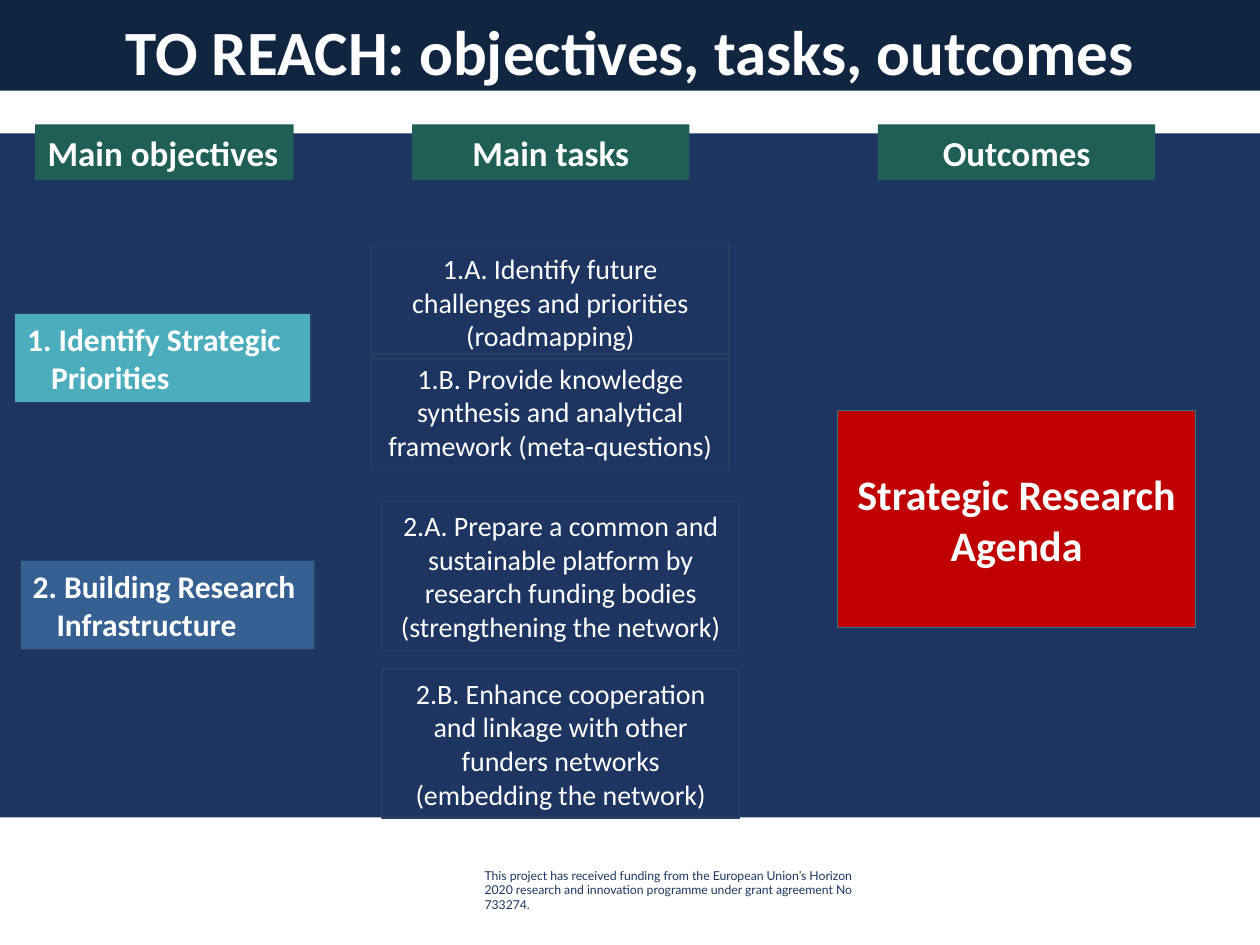
from pptx import Presentation
from pptx.dml.color import RGBColor
from pptx.enum import shapes, text
from pptx.util import Cm, Pt

NAVY, DARK_NAVY, OUTLINE = "1E3562", "10253F", "254061"
GREEN, TEAL, BLUE, RED = "1F5F56", "4CAEBC", "376092", "C00000"
WHITE = "FFFFFF"
LEFT, CENTER = text.PP_ALIGN.LEFT, text.PP_ALIGN.CENTER

HEADER_TOP, HEADER_HEIGHT = 2.51, 1.12
HEADERS = [
    ("Main objectives", 0.71, 5.21, LEFT),
    ("Main tasks", 8.31, 5.59, CENTER),
    ("Outcomes", 17.7, 5.59, CENTER),
]
OBJECTIVES = [
    ("1. Identify Strategic Priorities", (0.3, 6.32, 5.97, 1.8), TEAL),
    ("2. Building Research Infrastructure", (0.41, 11.3, 5.94, 1.8), BLUE),
]
TASK_WIDTH = 7.21
TASKS = [
    ("1.A. Identify future challenges and priorities (roadmapping)", 7.49, 4.93, 2.31),
    ("1.B. Provide knowledge synthesis and analytical framework (meta-questions)",
     7.49, 7.14, 2.31),
    ("2.A. Prepare a common and sustainable platform by research funding bodies "
     "(strengthening the network)", 7.7, 10.11, 3),
    ("2.B. Enhance cooperation and linkage with other funders networks\n"
     "(embedding the network)", 7.7, 13.49, 3),
]
FUNDING = ("This project has received funding from the European Union’s Horizon 2020 "
           "research and innovation programme under grant agreement No 733274.")


def rgb(color):
    return RGBColor.from_string(color)


def write(frame, wording, size, color=WHITE, bold=False, align=CENTER,
          font="Calibri", hanging=0):
    """Fill a text frame; hanging is the hanging indent in centimetres."""
    settings = {"word_wrap": True, "auto_size": text.MSO_AUTO_SIZE.NONE,
                "vertical_anchor": text.MSO_ANCHOR.MIDDLE}
    for name, value in settings.items():
        setattr(frame, name, value)
    frame.text = wording
    for paragraph in frame.paragraphs:
        paragraph.alignment = align
        if hanging:
            properties = paragraph._p.get_or_add_pPr()
            properties.set("marL", str(Cm(hanging)))
            properties.set("indent", str(-Cm(hanging)))
        for run in paragraph.runs:
            for name, value in {"name": font, "size": Pt(size), "bold": bold}.items():
                setattr(run.font, name, value)
            run.font.color.rgb = rgb(color)


def add_box(slide, place, fill=None, line=None, wording="", **style):
    box = slide.shapes.add_shape(shapes.MSO_SHAPE.RECTANGLE, *map(Cm, place))
    box.shadow.inherit = False
    if fill:
        box.fill.solid()
        box.fill.fore_color.rgb = rgb(fill)
    else:
        box.fill.background()
    if line:
        box.line.color.rgb = rgb(line)
        box.line.width = Pt(0.75)
    else:
        box.line.fill.background()
    if wording:
        write(box.text_frame, wording, **style)


def set_title(slide, wording):
    title = slide.shapes.title
    place = {"left": 0, "top": 0, "width": 25.4, "height": 1.83}
    for name, value in place.items():
        setattr(title, name, Cm(value))
    title.fill.solid()
    title.fill.fore_color.rgb = rgb(DARK_NAVY)
    write(title.text_frame, wording, size=36, bold=True)
    title.text_frame.margin_top = Cm(0.25)
    title.text_frame.margin_bottom = Cm(0.05)


def add_funding_note(slide):
    note = slide.shapes.add_textbox(Cm(9.52), Cm(17.37), Cm(8.36), Cm(1.14))
    write(note.text_frame, FUNDING, size=7, color=NAVY, align=LEFT, font="Lato")


def main():
    deck = Presentation()
    deck.slide_width, deck.slide_height = Cm(25.4), Cm(19.05)
    slide = deck.slides.add_slide(deck.slide_layouts[5])
    set_title(slide, "TO REACH: objectives, tasks, outcomes")
    add_box(slide, (0, 2.69, 25.4, 13.79), NAVY)
    add_funding_note(slide)
    for wording, left, width, align in HEADERS:
        add_box(slide, (left, HEADER_TOP, width, HEADER_HEIGHT), GREEN,
                wording=wording, size=20, bold=True, align=align)
    for wording, place, fill in OBJECTIVES:
        add_box(slide, place, fill, OUTLINE, wording,
                size=18, bold=True, align=LEFT, hanging=0.48)
    for wording, left, top, height in TASKS:
        add_box(slide, (left, top, TASK_WIDTH, height), line=OUTLINE,
                wording=wording, size=16)
    add_box(slide, (16.89, 8.28, TASK_WIDTH, 4.37), RED, "307680",
            "Strategic Research Agenda", size=24, bold=True)
    deck.save("out.pptx")


if __name__ == "__main__":
    main()
